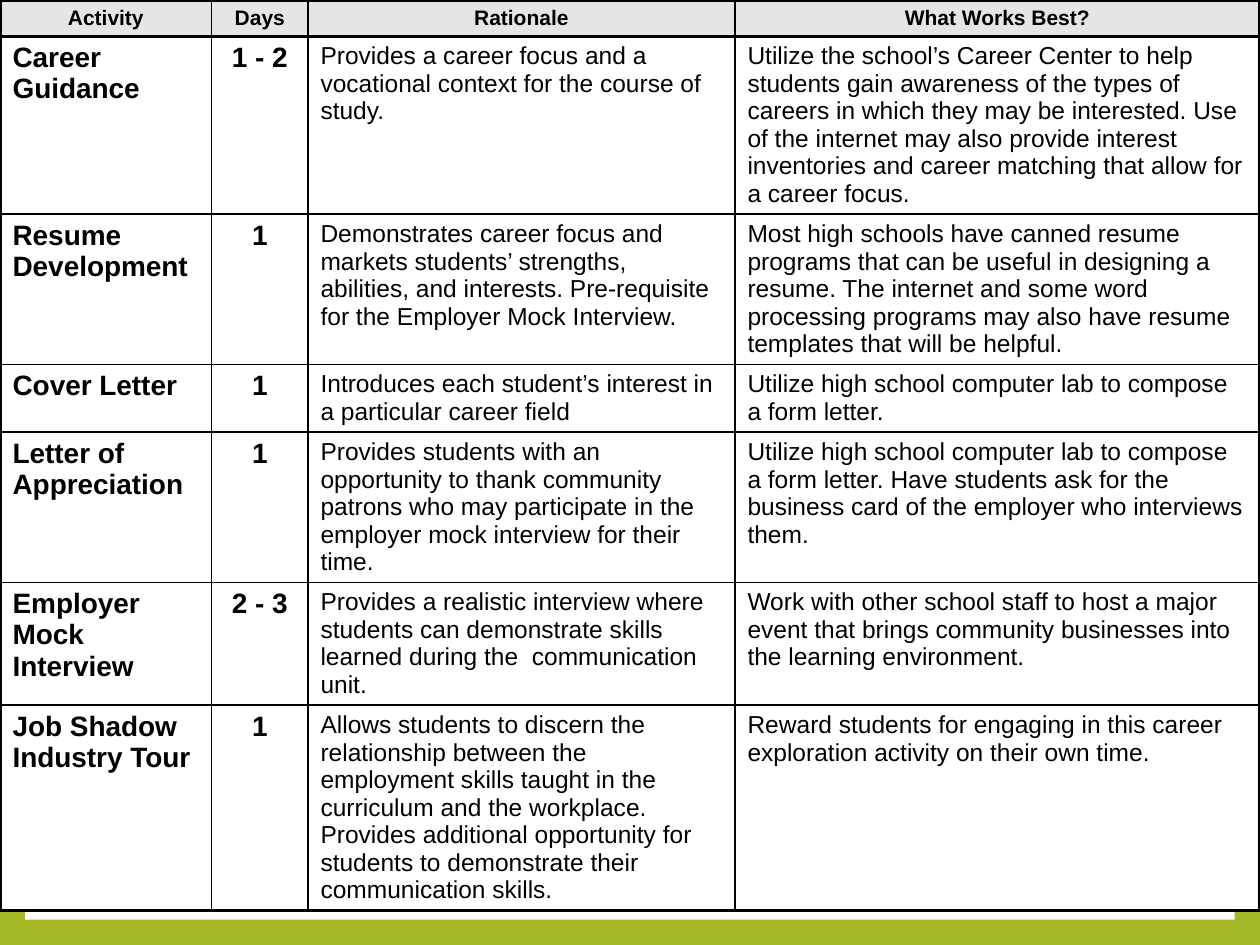
"""Build a slide with a table of career activities and their rationale."""
from dataclasses import astuple, dataclass

from lxml.etree import SubElement
from pptx import Presentation
from pptx.dml.color import RGBColor
from pptx.enum.shapes import MSO_SHAPE
from pptx.enum.text import PP_ALIGN
from pptx.oxml.ns import qn
from pptx.table import _Cell
from pptx.util import Pt

COLORS = {"ground": "A6B727", "paper": "FFFFFF", "header": "E5E5E5", "ink": "000000"}
FONT = "Arial"
COLUMN_WIDTHS = (121, 55, 244, 300)
ROW_HEIGHTS = (18, 92, 78.5, 36, 78.5, 64, 106)
THIN, THICK = 1, 2


@dataclass(frozen=True)
class Activity:
    name: str
    days: str
    rationale: str
    advice: str


HEADINGS = Activity("Activity", "Days", "Rationale", "What Works Best?")
ACTIVITIES = (
    Activity(
        "Career Guidance",
        "1 - 2",
        "Provides a career focus and a vocational context for the course of study.",
        "Utilize the school’s Career Center to help students gain awareness of the types of "
        "careers in which they may be interested. Use of the internet may also provide interest "
        "inventories and career matching that allow for a career focus.",
    ),
    Activity(
        "Resume Development",
        "1",
        "Demonstrates career focus and markets students’ strengths, abilities, and interests. "
        "Pre-requisite for the Employer Mock Interview.",
        "Most high schools have canned resume programs that can be useful in designing a resume. "
        "The internet and some word processing programs may also have resume templates that will "
        "be helpful.",
    ),
    Activity(
        "Cover Letter",
        "1",
        "Introduces each student’s interest in a particular career field",
        "Utilize high school computer lab to compose a form letter.",
    ),
    Activity(
        "Letter of Appreciation",
        "1",
        "Provides students with an opportunity to thank community patrons who may participate in "
        "the employer mock interview for their time.",
        "Utilize high school computer lab to compose a form letter. Have students ask for the "
        "business card of the employer who interviews them.",
    ),
    Activity(
        "Employer Mock Interview",
        "2 - 3",
        "Provides a realistic interview where students can demonstrate skills learned during "
        "the  communication unit.",
        "Work with other school staff to host a major event that brings community businesses into "
        "the learning environment.",
    ),
    Activity(
        "Job Shadow Industry Tour",
        "1",
        "Allows students to discern the relationship between the employment skills taught in the "
        "curriculum and the workplace. Provides additional opportunity for students to "
        "demonstrate their communication skills.",
        "Reward students for engaging in this career exploration activity on their own time.",
    ),
)


def color(key: str) -> RGBColor:
    """Return the named palette colour."""
    return RGBColor.from_string(COLORS[key])


def write(cell: _Cell, text: str, *, size: float, bold: bool, centered: bool) -> None:
    """Put formatted text in a cell."""
    paragraph = cell.text_frame.paragraphs[0]
    paragraph.alignment = PP_ALIGN.CENTER if centered else PP_ALIGN.LEFT
    run = paragraph.add_run()
    run.text = text
    run.font.name = FONT
    run.font.size = Pt(size)
    run.font.bold = bold
    run.font.color.rgb = color("ink")


def draw_borders(cell: _Cell, **widths: float) -> None:
    """Rule the sides of a cell, given in schema order."""
    properties = cell._tc.get_or_add_tcPr()
    for side, width in widths.items():
        line = SubElement(properties, qn(f"a:{side}"), w=str(Pt(width)))
        fill = SubElement(line, qn("a:solidFill"))
        SubElement(fill, qn("a:srgbClr"), val=COLORS["ink"])


def fill_cell(cell: _Cell, text: str, row: int, column: int) -> None:
    """Format one cell by its place in the table."""
    is_header = row == 0
    is_label = column < 2
    draw_borders(
        cell,
        lnL=THICK if column == 0 else THIN,
        lnR=THICK if column == len(COLUMN_WIDTHS) - 1 else THIN,
        lnT=THICK if row < 2 else THIN,
        lnB=THICK if row in (0, len(ACTIVITIES)) else THIN,
    )
    cell.fill.solid()
    cell.fill.fore_color.rgb = color("header" if is_header else "paper")
    write(
        cell,
        text,
        size=12 if is_header else 16 if is_label else 14,
        bold=is_header or is_label,
        centered=is_header or column == 1,
    )


def main() -> None:
    """Build and save the slide."""
    deck = Presentation()
    deck.slide_width, deck.slide_height = Pt(720), Pt(540)
    slide = deck.slides.add_slide(deck.slide_layouts[6])
    slide.background.fill.solid()
    slide.background.fill.fore_color.rgb = color("ground")

    paper = slide.shapes.add_shape(MSO_SHAPE.RECTANGLE, Pt(14.4), Pt(14.4), Pt(691.2), Pt(511.2))
    paper.shadow.inherit = False
    paper.fill.solid()
    paper.fill.fore_color.rgb = color("paper")
    paper.line.fill.background()

    schedule = slide.shapes.add_table(
        len(ROW_HEIGHTS), len(COLUMN_WIDTHS), 0, 0, Pt(sum(COLUMN_WIDTHS)), Pt(sum(ROW_HEIGHTS))
    ).table
    for column, width in zip(schedule.columns, COLUMN_WIDTHS):
        column.width = Pt(width)
    for row, height in zip(schedule.rows, ROW_HEIGHTS):
        row.height = Pt(height)
    for row, activity in enumerate((HEADINGS, *ACTIVITIES)):
        for column, text in enumerate(astuple(activity)):
            fill_cell(schedule.cell(row, column), text, row, column)

    deck.save("out.pptx")


if __name__ == "__main__":
    main()
